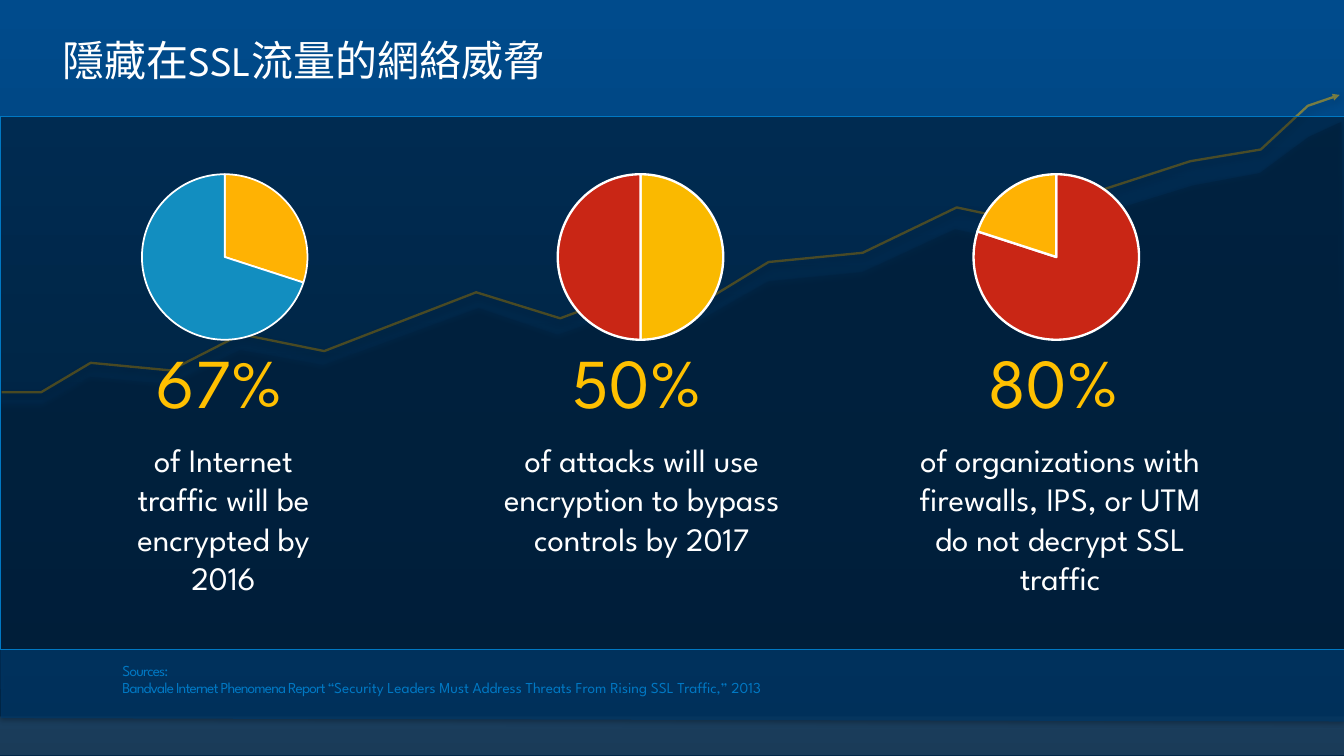
"""Build a slide with three pie charts about threats hidden in SSL traffic."""
import copy

import pptx
import pptx.chart.data
import pptx.dml.color
import pptx.enum.chart
import pptx.enum.shapes
import pptx.enum.text
import pptx.oxml
import pptx.oxml.ns
import pptx.util
from lxml import etree

COLORS = {
    "top": "004B8C", "middle": "003869", "bottom": "002546",
    "white": "FFFFFF", "black": "000000", "border": "0078C3",
    "trend": "FAB900", "amber": "FFB203", "red": "C92615",
    "cyan": "128EC0", "figure": "FFC000",
}
TREND_LINE = [
    (0.02, 4.67), (0.49, 4.67), (1.08, 4.32), (2.03, 4.41), (2.87, 3.98),
    (3.86, 4.18), (5.67, 3.48), (6.67, 3.79), (7.58, 3.45), (8.33, 3.62),
    (9.15, 3.12), (10.27, 3.01), (11.39, 2.47), (12.14, 2.63), (12.66, 2.41),
    (14.17, 1.92), (15.01, 1.78), (15.57, 1.26), (15.95, 1.13),
]
TREND_AREA = [
    (0, 4.82), (0.51, 4.82), (1.08, 4.49), (2.02, 4.58), (2.86, 4.17),
    (3.85, 4.35), (5.7, 3.67), (6.64, 3.99), (7.54, 3.67), (8.31, 3.83),
    (9.15, 3.35), (10.27, 3.24), (11.37, 2.73), (12.12, 2.89), (12.61, 2.7),
    (14.2, 2.21), (15, 2.06), (15.58, 1.63), (15.97, 1.45), (16.01, 8.59),
    (0.01, 8.55),
]
STATISTICS = [
    ("67%", "of Internet traffic will be encrypted by 2016", 2.72,
     (30, 70), ("amber", "cyan"), 1.5),
    ("50%", "of attacks will use encryption to bypass controls by 2017", 3.59,
     (50, 50), ("trend", "red"), 2),
    ("80%", "of organizations with firewalls, IPS, or UTM do not decrypt SSL traffic", 3.59,
     (80, 20), ("red", "amber"), 2),
]


class SlideBuilder:
    """Hold the style and the current slide on a grid of 16 columns by 9 rows."""

    font = "League Spartan"
    columns, rows = 16, 9

    def __init__(self, presentation):
        self.column = presentation.slide_width / self.columns
        self.row = presentation.slide_height / self.rows
        self.slide = presentation.slides.add_slide(presentation.slide_layouts[5])
        self.shapes = self.slide.shapes

    def box(self, left, top, width, height):
        return (round(left * self.column), round(top * self.row),
                round(width * self.column), round(height * self.row))

    def paint(self, color_format, color, opacity=100):
        color_format.rgb = pptx.dml.color.RGBColor.from_string(COLORS[color])
        return str(opacity * 1000)

    def fill(self, shape, color, opacity=100):
        shape.fill.solid()
        alpha = self.paint(shape.fill.fore_color, color, opacity)
        self.add_alpha(shape.element.spPr.find(pptx.oxml.ns.qn("a:solidFill")), alpha)

    def outline(self, shape, color, points, opacity=100):
        shape.line.width = pptx.util.Pt(points)
        alpha = self.paint(shape.line.color, color, opacity)
        line = shape.element.spPr.find(pptx.oxml.ns.qn("a:ln"))
        self.add_alpha(line.find(pptx.oxml.ns.qn("a:solidFill")), alpha)
        return line

    def add_alpha(self, solid_fill, alpha):
        etree.SubElement(solid_fill[0], pptx.oxml.ns.qn("a:alpha")).set("val", alpha)

    def rectangle(self, *place):
        shape = self.shapes.add_shape(
            pptx.enum.shapes.MSO_SHAPE.RECTANGLE, *self.box(*place))
        shape.shadow.inherit = False
        shape.line.fill.background()
        return shape

    def gradient(self, shape, stops):
        shape.fill.gradient()
        shape.fill.gradient_angle = 270
        stop_list = shape.element.spPr.find(".//" + pptx.oxml.ns.qn("a:gsLst"))
        stop_list.append(copy.deepcopy(stop_list[-1]))
        for stop, (position, color) in zip(shape.fill.gradient_stops, stops):
            stop.position = position
            self.paint(stop.color, color)

    def freeform(self, points, closed, shadow_opacity):
        places = [self.box(x, y, 0, 0)[:2] for x, y in points]
        builder = self.shapes.build_freeform(*places[0])
        builder.add_line_segments(places[1:], close=closed)
        shape = builder.convert_to_shape()
        shape.shadow.inherit = False
        shape.fill.background()
        shape.line.fill.background()
        effects = shape.element.spPr.find(pptx.oxml.ns.qn("a:effectLst"))
        effects.append(pptx.oxml.parse_xml(
            f'<a:outerShdw {pptx.oxml.ns.nsdecls("a")} blurRad="39370" dist="21590" '
            f'dir="5400000" rotWithShape="0"><a:srgbClr val="{COLORS["black"]}">'
            f'<a:alpha val="{shadow_opacity * 1000}"/></a:srgbClr></a:outerShdw>'))
        return shape

    def format_runs(self, paragraph, size, color):
        for run in paragraph.runs:
            run.font.name = self.font
            run.font.size = pptx.util.Pt(size)
            self.paint(run.font.color, color)

    def title(self, text, *place):
        title = self.shapes.title
        title.left, title.top, title.width, title.height = self.box(*place)
        title.element.getparent().append(title.element)
        frame = title.text_frame
        frame.text = text
        frame.auto_size = pptx.enum.text.MSO_AUTO_SIZE.NONE
        frame.vertical_anchor = pptx.enum.text.MSO_ANCHOR.MIDDLE
        frame.margin_left = frame.margin_right = frame.margin_top = frame.margin_bottom = 0
        paragraph = frame.paragraphs[0]
        paragraph.alignment = pptx.enum.text.PP_ALIGN.LEFT
        paragraph.line_spacing = 0.95
        paragraph.space_after = pptx.util.Pt(2)
        self.format_runs(paragraph, 36, "white")

    def text(self, text, place, size, color, centered=False, wrap=True):
        frame = self.shapes.add_textbox(*self.box(*place)).text_frame
        frame.text = text
        frame.word_wrap = wrap
        frame.auto_size = pptx.enum.text.MSO_AUTO_SIZE.SHAPE_TO_FIT_TEXT
        for paragraph in frame.paragraphs:
            if centered:
                paragraph.alignment = pptx.enum.text.PP_ALIGN.CENTER
            self.format_runs(paragraph, size, color)
        return frame

    def pie(self, values, colors, border, place):
        data = pptx.chart.data.CategoryChartData()
        data.categories = ["1", "2"]
        data.add_series("Series 1", values)
        chart = self.shapes.add_chart(
            pptx.enum.chart.XL_CHART_TYPE.PIE, *self.box(*place), data).chart
        chart.has_legend = chart.has_title = False
        chart.font.name = self.font
        chart.font.size = pptx.util.Pt(10)
        self.paint(chart.font.color, "black")
        plot = chart.plots[0]
        plot.vary_by_categories = True
        for index, color in enumerate(colors):
            slice_format = plot.series[0].points[index].format
            slice_format.fill.solid()
            self.paint(slice_format.fill.fore_color, color)
            slice_format.line.width = pptx.util.Pt(border)
            self.paint(slice_format.line.color, "white")
        self.center_plot(chart, 0.84, 0.88)

    def center_plot(self, chart, width, height):
        area = chart.element.find(".//" + pptx.oxml.ns.qn("c:plotArea"))
        for layout in area.findall(pptx.oxml.ns.qn("c:layout")):
            area.remove(layout)
        settings = {"layoutTarget": "inner", "xMode": "edge", "yMode": "edge",
                    "x": (1 - width) / 2, "y": (1 - height) / 2, "w": width, "h": height}
        layout = etree.Element(pptx.oxml.ns.qn("c:layout"))
        manual = etree.SubElement(layout, pptx.oxml.ns.qn("c:manualLayout"))
        for name, value in settings.items():
            text = value if isinstance(value, str) else f"{value:.2f}"
            etree.SubElement(manual, pptx.oxml.ns.qn(f"c:{name}")).set("val", text)
        area.insert(0, layout)


def main():
    presentation = pptx.Presentation()
    presentation.slide_width = pptx.util.Inches(16)
    presentation.slide_height = pptx.util.Inches(9)
    builder = SlideBuilder(presentation)

    backdrop = builder.rectangle(0, 0, 16, 9)
    builder.gradient(backdrop, [(0, "top"), (0.7, "middle"), (1, "bottom")])
    builder.fill(builder.rectangle(0, 8.53, 16, 0.46), "white", 10)
    trend = builder.freeform(TREND_LINE, False, 38)
    line = builder.outline(trend, "trend", 2, 48)
    etree.SubElement(line, pptx.oxml.ns.qn("a:tailEnd")).set("type", "triangle")
    builder.fill(builder.freeform(TREND_AREA, True, 35), "middle", 70)
    panel = builder.rectangle(0, 1.39, 16, 6.34)
    builder.fill(panel, "black", 38)
    builder.outline(panel, "border", 0.75)
    builder.title("隱藏在SSL流量的網絡威脅", 0.74, 0.34, 14.56, 0.8)

    for index, (figure, caption, width, values, colors, border) in enumerate(STATISTICS):
        offset = 4.95 * index
        builder.pie(values, colors, border, (1.49 + offset, 1.94, 2.37, 2.24))
        builder.text(figure, (1.77 + offset, 3.98, 1.79, 1.11), 60, "figure", wrap=False)
        left = 2.66 + 4.98 * index - width / 2
        builder.text(caption, (left, 5.19, width, 2), 28, "white", centered=True)

    sources = builder.text("Sources:\nBandvale Internet Phenomena Report “",
                           (1.36, 7.85, 13.09, 0.5), 13, "border")
    for paragraph in sources.paragraphs:
        paragraph.line_spacing = 0.9
        paragraph.runs[0].font._element.set("spc", "-70")
    report = sources.paragraphs[1]
    report.add_run().text = "Security Leaders Must Address Threats From Rising SSL Traffic,” 2013"
    builder.format_runs(report, 13, "border")
    presentation.save("out.pptx")


if __name__ == "__main__":
    main()
